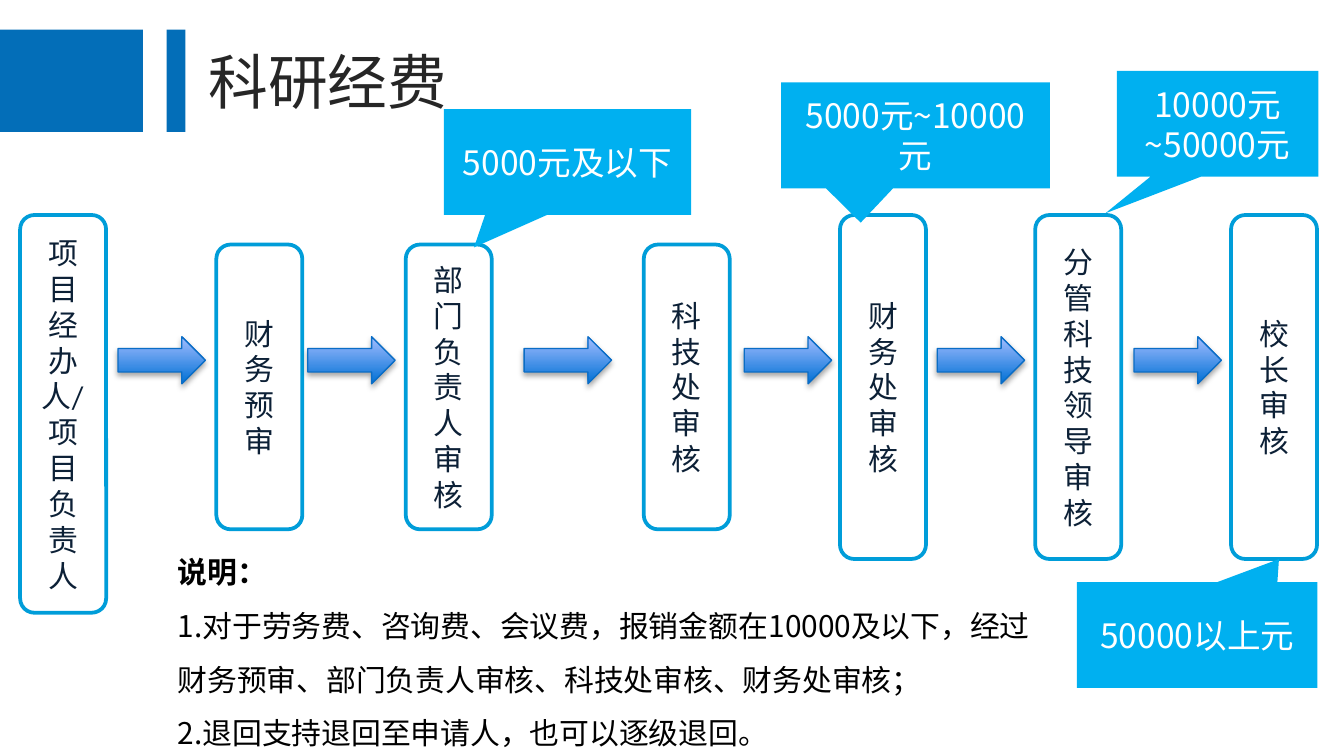
import pptx
import pptx.util
import pptx.oxml
import pptx.oxml.ns
import pptx.dml.color
import pptx.enum.shapes
import pptx.enum.text
from lxml import etree

Pt = pptx.util.Pt
SHAPE = pptx.enum.shapes.MSO_SHAPE
ALIGN = pptx.enum.text.PP_ALIGN
ANCHOR = pptx.enum.text.MSO_ANCHOR
qn = pptx.oxml.ns.qn

COLORS = {
    "band": "036EB8", "title": "262626", "note": "000000", "white": "FFFFFF",
    "step_line": "009DD9", "step_text": "0C2036", "callout": "00B0F0",
    "arrow_low": "0070D5", "arrow_high": "A3BDFF", "arrow_line": "0A6DC6",
}
CJK = "Noto Sans CJK SC"
TITLE = "科研经费"
BANDS = [(0, 76.5), (89.3, 10.1)]
STEPS = [
    ("项目经办人/项目负责人", 10.8, 115.2, 213.1),
    ("财务预审", 115.9, 131, 152.6),
    ("部门负责人审核", 217.4, 131, 152.6),
    ("科技处审核", 344.9, 131, 152.6),
    ("财务处审核", 450, 115.2, 184.3),
    ("分管科技领导审核", 554.6, 115.2, 184.3),
    ("校长审核", 659.5, 115.2, 184.3),
]
STEP_WIDTH = 46.1
ARROW_LEFTS = [63.2, 164.9, 280.8, 398.7, 502.1, 607.5]
CALLOUTS = [
    ("10000元~50000元", 598.3, 38, 108, (-0.557, 0.846)),
    ("5000元及以下", 237.8, 58.5, 132.5, (-0.378, 0.806)),
    ("5000元~10000元", 418.5, 44.2, 144, (-0.204, 0.825)),
    ("50000以上元", 576.9, 311.9, 128.9, (0.34, -0.718)),
]
CALLOUT_HEIGHT = 56.7
NOTES = [
    "说明：",
    "1.对于劳务费、咨询费、会议费，报销金额在10000及以下，经过",
    "财务预审、部门负责人审核、科技处审核、财务处审核；",
    "2.退回支持退回至申请人，也可以逐级退回。",
]
ARROW_SHADOW = (
    '<a:effectLst xmlns:a="http://schemas.openxmlformats.org/drawingml/2006/main">'
    '<a:outerShdw blurRad="39370" dist="22860" dir="5400000" rotWithShape="0">'
    '<a:srgbClr val="000000"><a:alpha val="35000"/></a:srgbClr>'
    '</a:outerShdw></a:effectLst>'
)


def rgb(name):
    return pptx.dml.color.RGBColor.from_string(COLORS[name])


def write(box, lines, color, font, align=ALIGN.CENTER, anchor=ANCHOR.MIDDLE, spacing=None):
    frame = box.text_frame
    frame.word_wrap = True
    frame.vertical_anchor = anchor
    for index, line in enumerate(lines):
        para = frame.add_paragraph() if index else frame.paragraphs[0]
        para.alignment = align
        para.line_spacing = spacing
        span = para.add_run()
        span.text = line
        for key, value in font.items():
            setattr(span.font, key, value)
        span.font.color.rgb = rgb(color)
        east = etree.SubElement(span.font._element, qn("a:ea"))
        east.set("typeface", font["name"])


def add_shape(page, kind, area, fill, line=None, weight=0):
    shape = page.shapes.add_shape(kind, *map(Pt, area))
    shape.shadow.inherit = False
    if fill:
        shape.fill.solid()
        shape.fill.fore_color.rgb = rgb(fill)
    if line:
        shape.line.color.rgb = rgb(line)
        shape.line.width = Pt(weight)
    else:
        shape.line.fill.background()
    return shape


def add_arrow(page, left):
    arrow = add_shape(page, SHAPE.RIGHT_ARROW, (left, 180.4, 46.8, 25.2), None, "arrow_line", 0.75)
    arrow.fill.gradient()
    arrow.fill.gradient_angle = 90
    for stop, color in zip(arrow.fill.gradient_stops, ("arrow_low", "arrow_high")):
        stop.color.rgb = rgb(color)
    properties = arrow._element.spPr
    properties.remove(properties.find(qn("a:effectLst")))
    properties.append(pptx.oxml.parse_xml(ARROW_SHADOW))


def main():
    """Build the research funding approval flow slide."""
    deck = pptx.Presentation()
    deck.slide_width, deck.slide_height = Pt(720), Pt(405)
    page = deck.slides.add_slide(deck.slide_layouts[5])

    title = page.shapes.title
    title_area = {"left": 104.4, "top": 20.2, "width": 350.6, "height": 46.1}
    for key, value in title_area.items():
        setattr(title, key, Pt(value))
    title.text_frame.auto_size = pptx.enum.text.MSO_AUTO_SIZE.SHAPE_TO_FIT_TEXT
    write(title, [TITLE], "title", {"name": CJK, "size": Pt(32)}, ALIGN.LEFT, ANCHOR.TOP)

    for left, width in BANDS:
        add_shape(page, SHAPE.RECTANGLE, (left, 15.9, width, 54.8), "band")

    notes = page.shapes.add_textbox(*map(Pt, (88.1, 283.7, 545.8, 123.8)))
    write(notes, NOTES, "note", {"name": CJK, "size": Pt(16), "bold": False},
          ALIGN.LEFT, ANCHOR.TOP, 1.5)
    notes.text_frame.paragraphs[0].runs[0].font.bold = True

    for label, left, top, height in STEPS:
        area = (left, top, STEP_WIDTH, height)
        step = add_shape(page, SHAPE.ROUNDED_RECTANGLE, area, "white", "step_line", 2)
        write(step, [label], "step_text", {"name": "League Spartan", "size": Pt(16)})

    for left in ARROW_LEFTS:
        add_arrow(page, left)

    for label, left, top, width, tip in CALLOUTS:
        area = (left, top, width, CALLOUT_HEIGHT)
        callout = add_shape(page, SHAPE.RECTANGULAR_CALLOUT, area, "callout")
        callout.adjustments[0], callout.adjustments[1] = tip
        write(callout, [label], "white", {"name": CJK, "size": Pt(18)})

    deck.save("out.pptx")


if __name__ == "__main__":
    main()
